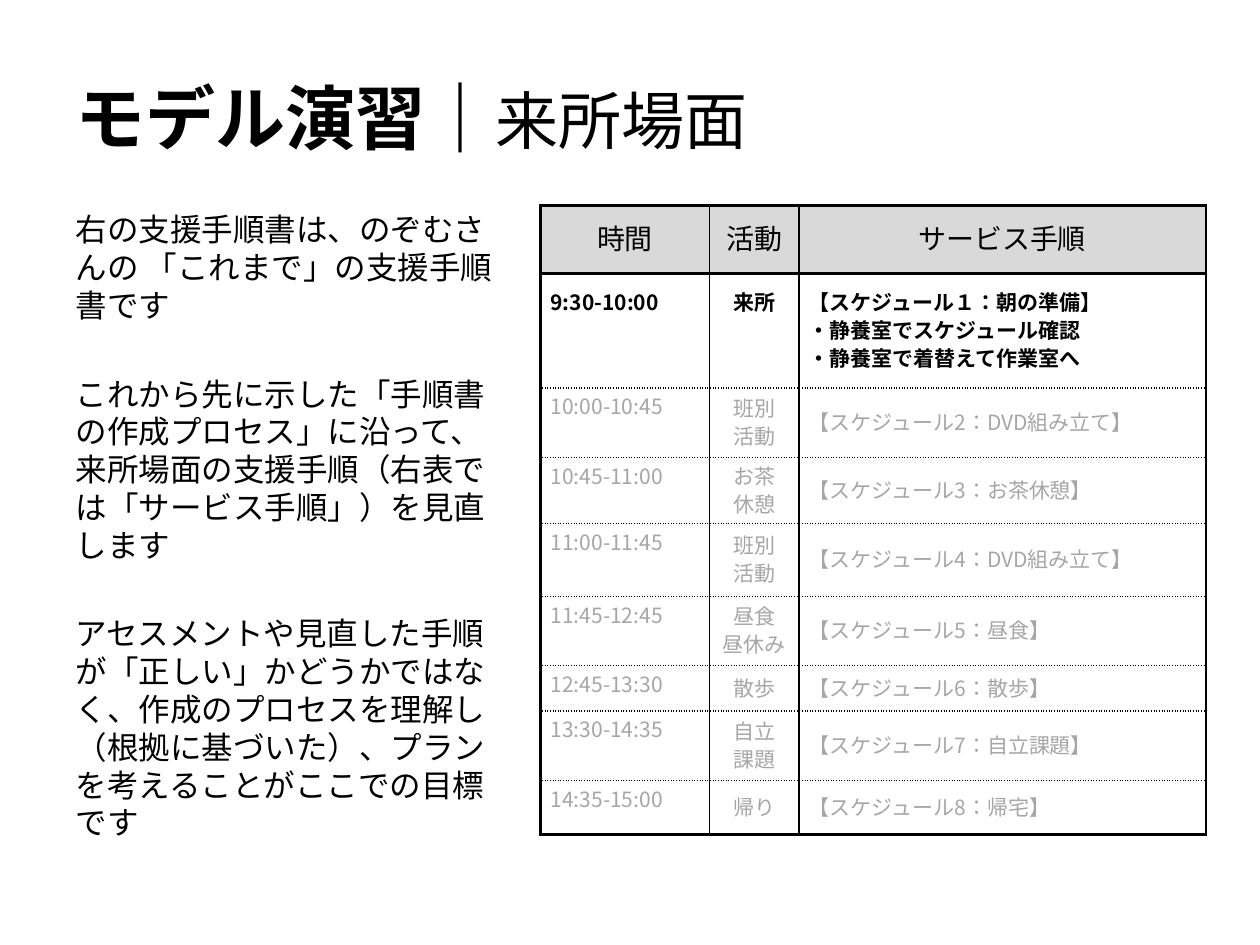
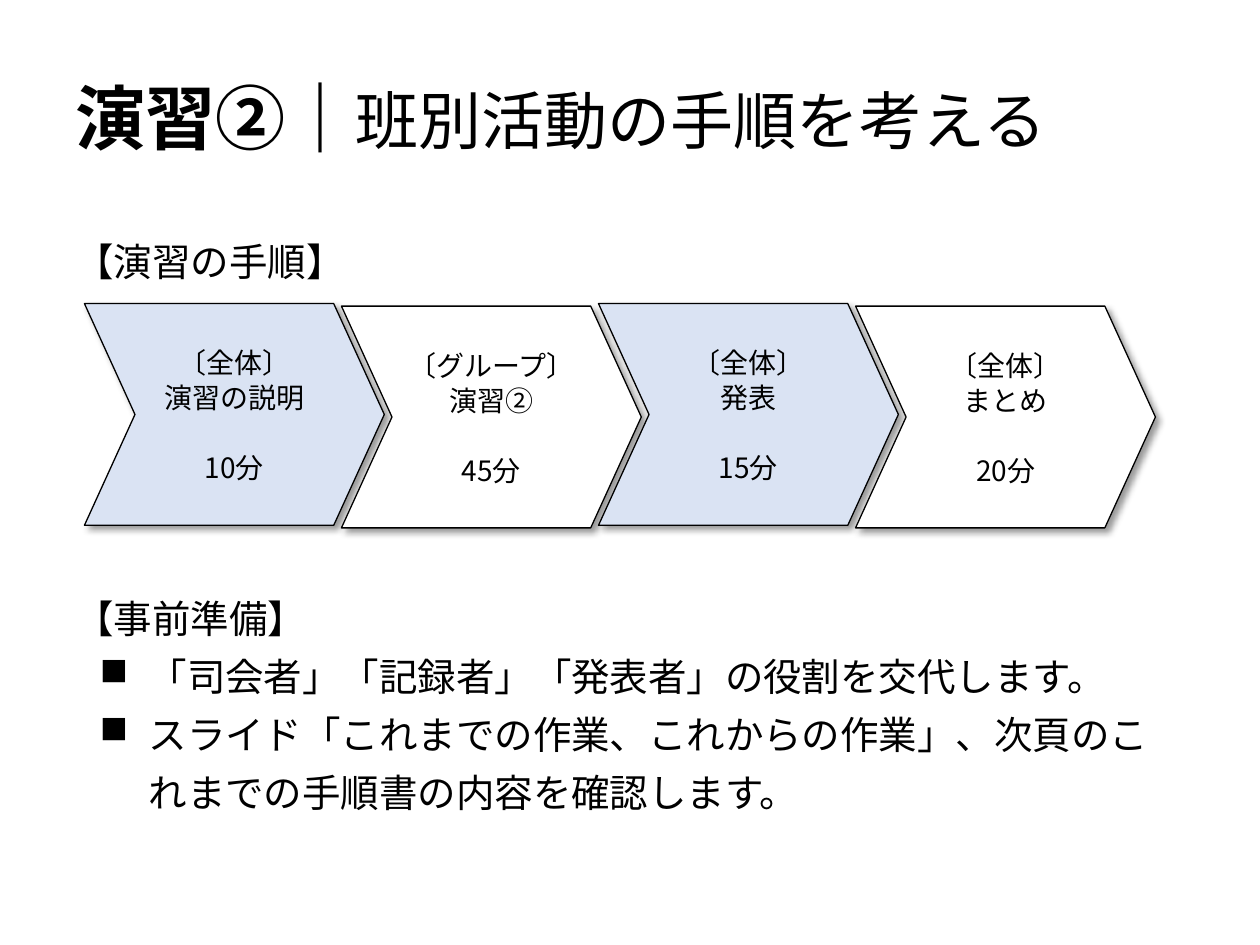
"""Build two training slides: a daily schedule table and an exercise flow."""
from lxml import etree
from pptx import Presentation, util as u
from pptx.dml.color import RGBColor
from pptx.enum import lang, shapes, text
from pptx.oxml import ns

FONT = "Noto Sans CJK JP"
COLORS = {"ink": "000000", "muted": "A6A6A6", "header": "D9D9D9",
          "step": "DAE3F3", "paper": "FFFFFF"}
LEFT, MIDDLE_ALIGN, JUSTIFY = (text.PP_ALIGN.LEFT, text.PP_ALIGN.CENTER,
                               text.PP_ALIGN.JUSTIFY)
TOP, MIDDLE = text.MSO_ANCHOR.TOP, text.MSO_ANCHOR.MIDDLE

SCHEDULE_TITLE = ("モデル演習｜", "来所場面")
EXPLANATION = [
    "右の支援手順書は、のぞむさんの 「これまで」の支援手順書です",
    "これから先に示した「手順書の作成プロセス」に沿って、来所場面の支援手順（右表では「サービス手順」）を見直します",
    "アセスメントや見直した手順が「正しい」かどうかではなく、作成のプロセスを理解し（根拠に基づいた）、"
    "プランを考えることがここでの目標です",
]
COLUMN_WIDTHS = [1.34, 0.71, 3.23]
COLUMN_ALIGNS = [LEFT, MIDDLE_ALIGN, JUSTIFY]
SCHEDULE = [
    (0.54, "時間", "活動", "サービス手順"),
    (0.91, "9:30-10:00", "来所",
     "【スケジュール１：朝の準備】\n・静養室でスケジュール確認\n・静養室で着替えて作業室へ"),
    (0.55, "10:00-10:45", "班別\n活動", "【スケジュール2：DVD組み立て】"),
    (0.48, "10:45-11:00", "お茶\n休憩", "【スケジュール3：お茶休憩】"),
    (0.58, "11:00-11:45", "班別\n活動", "【スケジュール4：DVD組み立て】"),
    (0.55, "11:45-12:45", "昼食\n昼休み", "【スケジュール5：昼食】"),
    (0.36, "12:45-13:30", "散歩", "【スケジュール6：散歩】"),
    (0.55, "13:30-14:35", "自立\n課題", "【スケジュール7：自立課題】"),
    (0.43, "14:35-15:00", "帰り", "【スケジュール8：帰宅】"),
]

EXERCISE_TITLE = ("演習②｜", "班別活動の手順を考える")
HEADINGS = ["【演習の手順】", "【事前準備】"]
PREPARATIONS = [
    "「司会者」「記録者」「発表者」の役割を交代します。",
    "スライド「これまでの作業、これからの作業」、次頁のこれまでの手順書の内容を確認します。",
]
STEPS = [("〔全体〕", "演習の説明", "10分"), ("〔グループ〕", "演習②", "45分"),
         ("〔全体〕", "発表", "15分"), ("〔全体〕", "まとめ", "20分")]


def rgb(name):
    return RGBColor.from_string(COLORS[name])


def child(parent, tag, **attrs):
    return etree.SubElement(parent, ns.qn(tag), **attrs)


def style(p, size, color="ink", bold=False, align=LEFT, spacing=1.0, before=0):
    p.alignment = align
    p.line_spacing = spacing
    p.space_before = u.Pt(before)
    for r in p.runs:
        f = r.font
        f.size, f.bold, f.name = u.Pt(size), bold, FONT
        f.language_id = lang.MSO_LANGUAGE_ID.JAPANESE
        f.color.rgb = rgb(color)
        child(r._r.get_or_add_rPr(), "a:ea", typeface=FONT)


def bullet(p, mark=None, margin=0.0, hanging=0.0):
    pPr = p._p.get_or_add_pPr()
    pPr.set("marL", str(u.Inches(margin)))
    pPr.set("indent", str(-u.Inches(hanging)))
    if mark:
        child(pPr, "a:buFont", typeface="Wingdings", charset="2")
        child(pPr, "a:buChar", char=mark)
    else:
        child(pPr, "a:buNone")


def place(sp, left, top, width, height):
    sp.left, sp.top, sp.width, sp.height = map(u.Inches, (left, top, width, height))


def margins(target, left, top, right, bottom):
    target.margin_left, target.margin_top = u.Inches(left), u.Inches(top)
    target.margin_right, target.margin_bottom = u.Inches(right), u.Inches(bottom)


def new_slide(prs, title, body_box):
    s = prs.slides.add_slide(prs.slide_layouts[1])
    place(s.shapes.title, 0.5, 0.3, 9, 1.25)
    tf = s.shapes.title.text_frame
    tf.auto_size = text.MSO_AUTO_SIZE.NONE
    tf.vertical_anchor = MIDDLE
    p = tf.paragraphs[0]
    for part in title:
        p.add_run().text = part
    style(p, 40, bold=True)
    p.runs[1].font.size, p.runs[1].font.bold = u.Pt(36), False
    body = s.placeholders[1]
    place(body, *body_box)
    body.text_frame.auto_size = text.MSO_AUTO_SIZE.NONE
    return s, body.text_frame


def border(cell, row, col):
    edges = {"L": col == 0, "R": col == len(COLUMN_WIDTHS) - 1,
             "T": row <= 1, "B": row in (0, len(SCHEDULE) - 1)}
    tcPr = cell._tc.get_or_add_tcPr()
    for side, heavy in edges.items():
        ln = child(tcPr, "a:ln" + side, w=str(u.Pt(1.5 if heavy else 1)))
        child(child(ln, "a:solidFill"), "a:srgbClr", val=COLORS["ink"])
        dotted = side in "TB" and not heavy
        child(ln, "a:prstDash", val="sysDot" if dotted else "solid")


def fill_cell(cell, row, col, content):
    header, current = row == 0, row == 1
    border(cell, row, col)
    if header:
        cell.fill.solid()
        cell.fill.fore_color.rgb = rgb("header")
        margins(cell, 0.06, 0.12, 0.06, 0)
    else:
        cell.fill.background()
        margins(cell, 0.08, 0.12 if current else 0.04, 0.08, 0.04)
    cell.vertical_anchor = MIDDLE if header or (row > 1 and col) else TOP
    cell.text_frame.text = content
    for p in cell.text_frame.paragraphs:
        style(p, 16 if header else 12, "ink" if row < 2 else "muted", current,
              MIDDLE_ALIGN if header else COLUMN_ALIGNS[col],
              u.Pt(12 if header else 16))


def schedule_slide(prs):
    s, tf = new_slide(prs, SCHEDULE_TITLE, (0.5, 1.62, 3.67, 5.12))
    tf.text = "\n".join(EXPLANATION)
    for i, p in enumerate(tf.paragraphs):
        style(p, 18, before=29 if i else 0)
        bullet(p)
    frame = s.shapes.add_table(len(SCHEDULE), len(COLUMN_WIDTHS), u.Inches(4.29),
                               u.Inches(1.63), u.Inches(5.28), u.Inches(5))
    table = frame.table
    table.first_row = table.horz_banding = False
    for column, width in zip(table.columns, COLUMN_WIDTHS):
        column.width = u.Inches(width)
    for row, (height, *contents) in enumerate(SCHEDULE):
        table.rows[row].height = u.Inches(height)
        for col, content in enumerate(contents):
            fill_cell(table.cell(row, col), row, col, content)


def add_shadow(sp):
    effects = child(sp._element.spPr, "a:effectLst")
    shadow = child(effects, "a:outerShdw", blurRad=str(u.Pt(4)), dist=str(u.Pt(3)),
                   dir=str(45 * 60000), algn="tl", rotWithShape="0")
    child(child(shadow, "a:srgbClr", val=COLORS["ink"]), "a:alpha", val="40000")


def add_step(s, i, lines):
    sp = s.shapes.add_shape(shapes.MSO_SHAPE.CHEVRON, 0, 0, 0, 0)
    place(sp, 0.67 + 2.04 * i, 2.41 + 0.02 * (i % 2), 2.38, 1.76)
    sp.adjustments[0] = 0.228
    sp.fill.solid()
    sp.fill.fore_color.rgb = rgb("paper" if i % 2 else "step")
    sp.line.color.rgb = rgb("ink")
    sp.line.width = u.Pt(0.75)
    add_shadow(sp)
    tf = sp.text_frame
    tf.word_wrap = True
    tf.vertical_anchor = MIDDLE
    margins(tf, 0.02, 0.05, 0.02, 0.05)
    tf.text = "\n".join(lines)
    for p in tf.paragraphs:
        style(p, 16, align=MIDDLE_ALIGN, spacing=u.Pt(20))
    tf.paragraphs[-1].space_before = u.Pt(20)


def exercise_slide(prs):
    s, tf = new_slide(prs, EXERCISE_TITLE, (0.5, 1.75, 9, 5.31))
    tf.text = "\n".join(HEADINGS + PREPARATIONS)
    for i, p in enumerate(tf.paragraphs):
        style(p, 22, spacing=u.Pt(33), before=171 if i == 1 else 0)
        if i < len(HEADINGS):
            bullet(p)
        else:
            bullet(p, "n", 0.58, 0.39)
    for i, lines in enumerate(STEPS):
        add_step(s, i, lines)


def main():
    prs = Presentation()
    prs.slide_width, prs.slide_height = u.Inches(10), u.Inches(7.5)
    schedule_slide(prs)
    exercise_slide(prs)
    prs.save("out.pptx")


if __name__ == "__main__":
    main()
